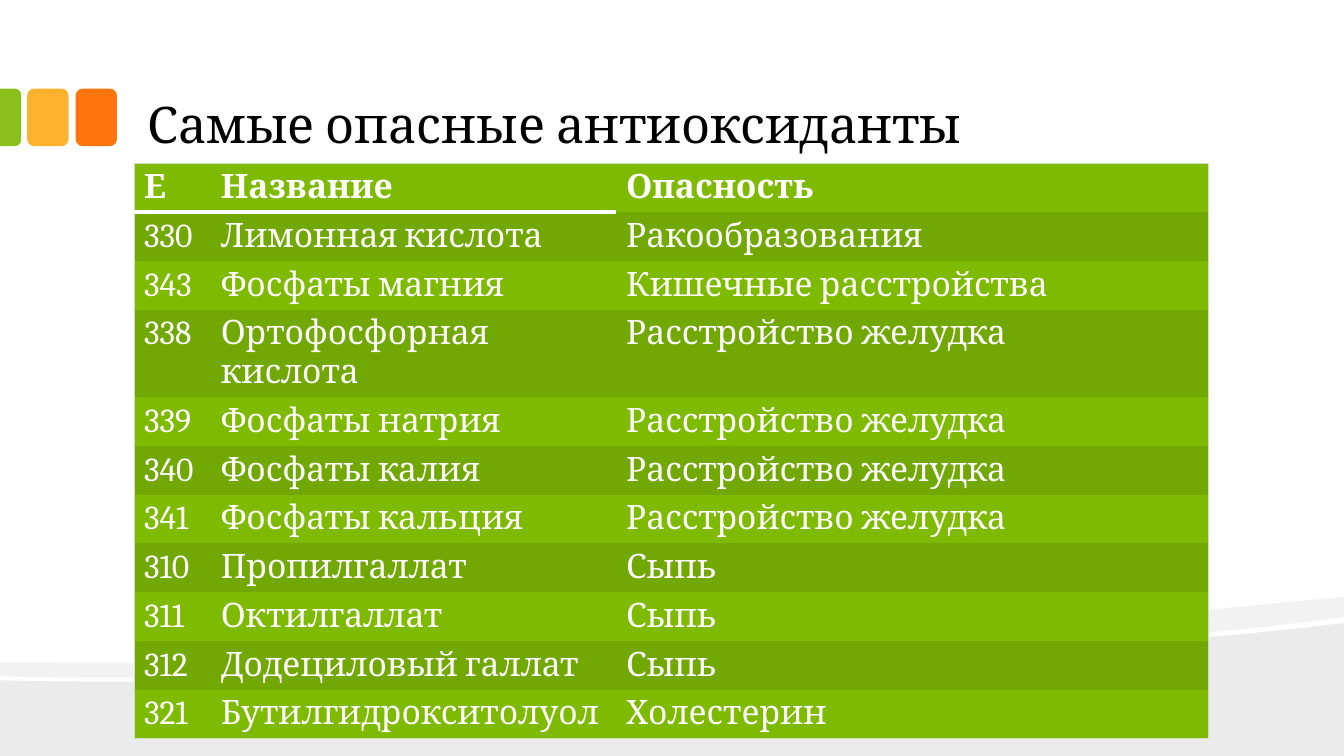
from lxml import etree
from pptx import Presentation
from pptx.dml.color import RGBColor
from pptx.enum import shapes, text
from pptx.oxml import ns
from pptx.util import Inches, Pt

TITLE = "Самые опасные антиоксиданты"
ROWS = [
    ("Е", "Название", "Опасность"),
    ("330", "Лимонная кислота", "Ракообразования"),
    ("343", "Фосфаты магния", "Кишечные расстройства"),
    ("338", "Ортофосфорная кислота", "Расстройство желудка"),
    ("339", "Фосфаты натрия", "Расстройство желудка"),
    ("340", "Фосфаты калия", "Расстройство желудка"),
    ("341", "Фосфаты кальция", "Расстройство желудка"),
    ("310", "Пропилгаллат", "Сыпь"),
    ("311", "Октилгаллат", "Сыпь"),
    ("312", "Додециловый галлат", "Сыпь"),
    ("321", "Бутилгидрокситолуол", "Холестерин"),
]
COLUMN_WIDTHS = (0.76, 4.02, 5.88)
LEFT, WIDTH = 1.33, 10.66
ROW_HEIGHT = 0.41

FONT = "Cambria"
PLAIN_TABLE_STYLE = "{2D5ABB26-0587-4C30-8999-92F81FD0307C}"
BLACK = RGBColor(0x00, 0x00, 0x00)
WHITE = RGBColor(0xFF, 0xFF, 0xFF)
GREEN = RGBColor(0x7D, 0xBA, 0x00)
DARK_GREEN = RGBColor(0x72, 0xA8, 0x03)
PALE_GREEN = RGBColor(0xCF, 0xE2, 0xBD)
TAB_GREEN = RGBColor(0x89, 0xC0, 0x1C)
TAB_YELLOW = RGBColor(0xFC, 0xB2, 0x2C)
TAB_ORANGE = RGBColor(0xFE, 0x75, 0x0E)
HILL_GREY = RGBColor(0xEB, 0xEB, 0xEB)
RIBBON_GREY = RGBColor(0xF2, 0xF2, 0xF2)

# Each outline: colour, start, then points (2 numbers) or curves (6 numbers)
WAVES = [
    (HILL_GREY, (13.33, 6.18),
     [(13.33, 7.5), (0, 7.5), (0, 6.75), (3.52, 6.83, 10.42, 6.55, 13.33, 6.18)]),
    (RIBBON_GREY, (13.33, 5.92),
     [(13.33, 6.12), (12.55, 6.23, 11.49, 6.33, 10.29, 6.41),
      (6.98, 6.63, 2.58, 6.77, 0, 6.71), (0, 6.57),
      (6.52, 6.62, 9.71, 6.27, 13.33, 5.92)]),
]
# Each tab: preset, left, top, width, height, rotation, corner, colour
TABS = [
    (shapes.MSO_SHAPE.ROUNDED_RECTANGLE, 0.75, 0.88, 0.41, 0.57, 0, 0.167, TAB_ORANGE),
    (shapes.MSO_SHAPE.ROUNDED_RECTANGLE, 0.27, 0.88, 0.41, 0.57, 0, 0.167, TAB_YELLOW),
    (shapes.MSO_SHAPE.ROUND_2_SAME_RECTANGLE, -0.18, 1.06, 0.57, 0.21, 90, 0.292, TAB_GREEN),
]


def paint(shape, color):
    shape.shadow.inherit = False
    shape.fill.solid()
    shape.fill.fore_color.rgb = color
    shape.line.fill.background()


def curve_points(start, curve, steps=24):
    """Points along a cubic Bezier curve, without its start."""
    xs, ys = (start[0], *curve[0::2]), (start[1], *curve[1::2])
    points = []
    for step in range(1, steps + 1):
        t = step / steps
        weights = ((1 - t) ** 3, 3 * t * (1 - t) ** 2, 3 * t * t * (1 - t), t ** 3)
        points.append(tuple(sum(w * v for w, v in zip(weights, axis)) for axis in (xs, ys)))
    return points


def add_wave(slide, color, start, segments):
    points = [start]
    for segment in segments:
        points += [segment] if len(segment) == 2 else curve_points(points[-1], segment)
    corners = [(Inches(x), Inches(y)) for x, y in points]
    builder = slide.shapes.build_freeform(*corners[0])
    builder.add_line_segments(corners[1:], close=True)
    paint(builder.convert_to_shape(), color)


def add_tab(slide, preset, left, top, width, height, rotation, corner, color):
    tab = slide.shapes.add_shape(preset, *map(Inches, (left, top, width, height)))
    tab.rotation = rotation
    tab.adjustments[0] = corner
    paint(tab, color)


def set_border(cell, side, color, points):
    properties = cell._tc.get_or_add_tcPr()
    line = etree.SubElement(properties, ns.qn("a:ln" + side), w=str(Pt(points)))
    fill = etree.SubElement(line, ns.qn("a:solidFill"))
    etree.SubElement(fill, ns.qn("a:srgbClr"), val=str(color))


def format_title(title):
    title.left, title.top, title.width, title.height = map(Inches, (LEFT, 0.17, WIDTH, 1.42))
    title.text = TITLE
    frame = title.text_frame
    frame.word_wrap = True
    frame.auto_size = text.MSO_AUTO_SIZE.NONE
    frame.vertical_anchor = text.MSO_ANCHOR.BOTTOM
    frame.margin_left = frame.margin_right = Inches(0.13)
    frame.margin_top = frame.margin_bottom = Inches(0.07)
    para = frame.paragraphs[0]
    para.alignment = text.PP_ALIGN.LEFT
    para.font.name, para.font.size, para.font.color.rgb = FONT, Pt(36), BLACK


def fill_cell(cell, wording, row, column):
    last_row, last_column = len(ROWS) - 1, len(COLUMN_WIDTHS) - 1
    if column == 0:
        set_border(cell, "L", PALE_GREEN, 0.75)
    if column == last_column:
        set_border(cell, "R", PALE_GREEN, 0.75)
    if row == 0:
        set_border(cell, "T", PALE_GREEN, 0.75)
        if column < last_column:
            set_border(cell, "B", WHITE, 3.5)
    if row == last_row:
        set_border(cell, "B", PALE_GREEN, 0.75)
    cell.fill.solid()
    cell.fill.fore_color.rgb = DARK_GREEN if row % 2 else GREEN
    cell.text = wording
    font = cell.text_frame.paragraphs[0].font
    font.name, font.size, font.bold, font.color.rgb = FONT, Pt(24), row == 0, WHITE


def add_hazard_table(slide):
    frame = slide.shapes.add_table(
        len(ROWS), len(COLUMN_WIDTHS),
        *map(Inches, (LEFT, 1.62, WIDTH, ROW_HEIGHT * len(ROWS))))
    table = frame.table
    table.horz_banding = False
    next(frame._element.iter(ns.qn("a:tableStyleId"))).text = PLAIN_TABLE_STYLE
    for column, width in zip(table.columns, COLUMN_WIDTHS):
        column.width = Inches(width)
    for row, wordings in enumerate(ROWS):
        table.rows[row].height = Inches(ROW_HEIGHT)
        for column, wording in enumerate(wordings):
            fill_cell(table.cell(row, column), wording, row, column)


def main():
    deck = Presentation()
    deck.slide_width, deck.slide_height = Inches(13.33), Inches(7.5)
    slide = deck.slides.add_slide(deck.slide_layouts[5])
    for wave in WAVES:
        add_wave(slide, *wave)
    for tab in TABS:
        add_tab(slide, *tab)
    format_title(slide.shapes.title)
    add_hazard_table(slide)
    deck.save("out.pptx")


if __name__ == "__main__":
    main()
